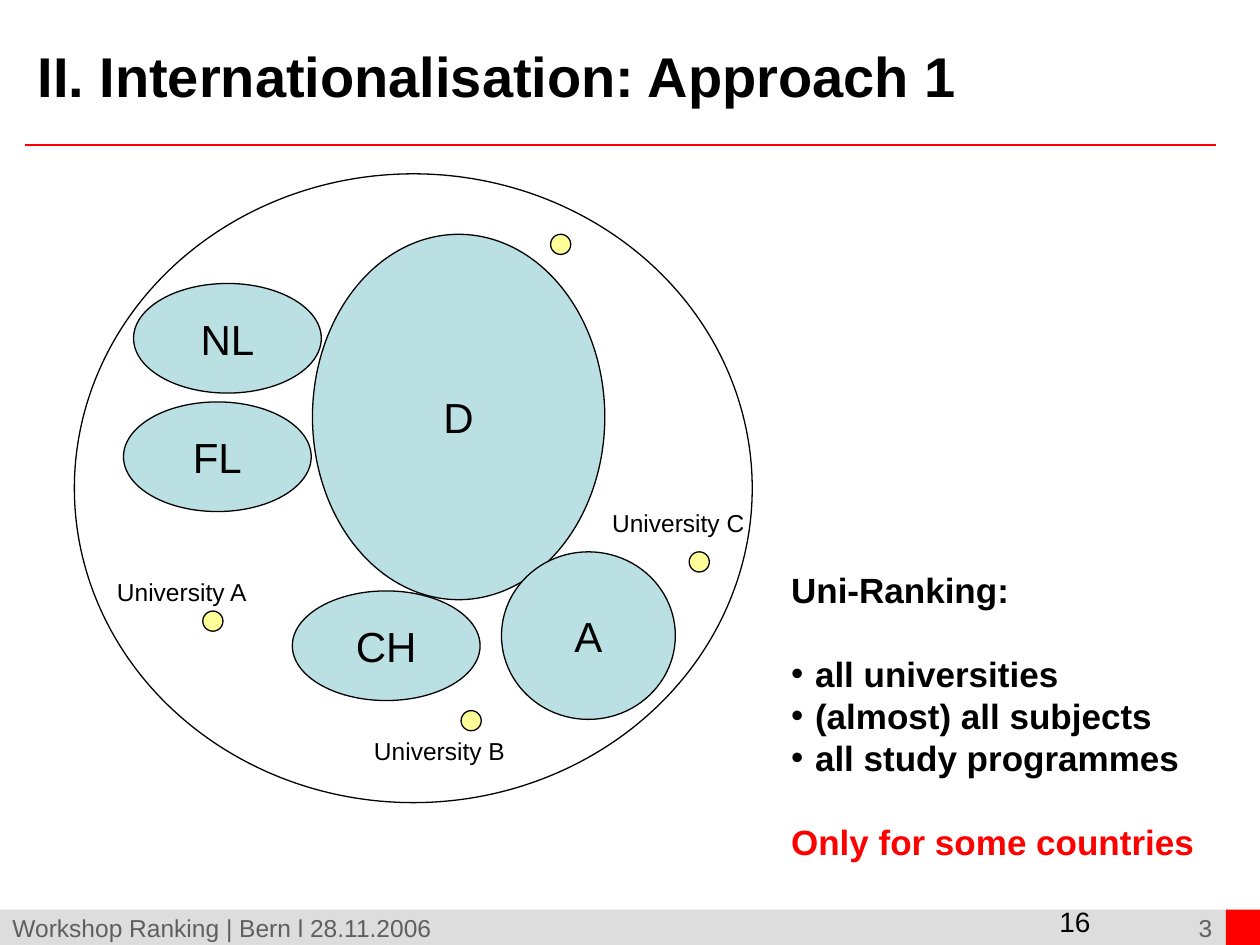
from lxml import etree
from pptx import Presentation
from pptx.dml.color import RGBColor
from pptx.enum.shapes import MSO_CONNECTOR, MSO_SHAPE
from pptx.enum.text import MSO_ANCHOR, PP_ALIGN
from pptx.oxml.ns import qn
from pptx.util import Inches, Pt

OVAL, RECTANGLE = MSO_SHAPE.OVAL, MSO_SHAPE.RECTANGLE
STRAIGHT = MSO_CONNECTOR.STRAIGHT
LEFT, CENTER, RIGHT = PP_ALIGN.LEFT, PP_ALIGN.CENTER, PP_ALIGN.RIGHT
MIDDLE = MSO_ANCHOR.MIDDLE

BLACK = RGBColor(0x00, 0x00, 0x00)
RED = RGBColor(0xFF, 0x00, 0x00)
BAR_GREY = RGBColor(0xDD, 0xDD, 0xDD)
FOOTER_GREY = RGBColor(0x5F, 0x5F, 0x5F)
COUNTRY_BLUE = RGBColor(0xBB, 0xE0, 0xE3)
UNIVERSITY_YELLOW = RGBColor(0xFF, 0xFF, 0x99)
FONT = "Arial"

# Content; boxes are (left, top, width, height) in inches
TITLE = "II. Internationalisation: Approach 1"
FOOTER = "Workshop Ranking | Bern l 28.11.2006"
COUNTRIES = [
    ("D", (2.48, 1.86, 2.32, 2.9)),
    ("A", (3.98, 4.38, 1.38, 1.33)),
    ("CH", (2.32, 4.69, 1.49, 0.87)),
    ("NL", (1.06, 2.25, 1.49, 0.87)),
    ("FL", (0.98, 3.19, 1.49, 0.87)),
]
RANKING_AREA = (0.59, 1.38, 5.38, 4.99)
DOT_SIZE = 0.16
UNIVERSITY_DOTS = [(1.61, 4.85), (3.66, 5.64), (4.37, 1.86), (5.47, 4.38)]
LABEL_WIDTH, LABEL_HEIGHT = 1.3, 0.33
UNIVERSITY_LABELS = [
    ("University A", 0.83, 4.53),
    ("University B", 2.87, 5.79),
    ("University C", 4.76, 3.98),
]
# text, bulleted, colour, space before in points
RANKING_NOTES = [
    ("Uni-Ranking:", False, BLACK, 0),
    ("all universities", True, BLACK, 24),
    ("(almost) all subjects", True, BLACK, 0),
    ("all study programmes", True, BLACK, 0),
    ("Only for some countries", False, RED, 24),
]
NOTES_INDENT = Inches(0.19)

prs = Presentation()
prs.slide_width, prs.slide_height = Inches(10), Inches(7.5)
slide = prs.slides.add_slide(prs.slide_layouts[6])


def style(paragraph, size, color=BLACK, bold=False, align=LEFT):
    paragraph.alignment = align
    font = paragraph.font
    font.name, font.size, font.bold = FONT, Pt(size), bold
    font.color.rgb = color


def add_shape(kind, box, fill=None, outlined=True):
    shape = slide.shapes.add_shape(kind, *map(Inches, box))
    shape.shadow.inherit = False
    if fill is None:
        shape.fill.background()
    else:
        shape.fill.solid()
        shape.fill.fore_color.rgb = fill
    if outlined:
        shape.line.color.rgb = BLACK
        shape.line.width = Pt(0.75)
    else:
        shape.line.fill.background()
    return shape


def add_text(text, box, size, wrap=True, **look):
    frame = slide.shapes.add_textbox(*map(Inches, box)).text_frame
    frame.word_wrap = wrap
    frame.text = text
    style(frame.paragraphs[0], size, **look)


# Footer bar, red corner and title rule
add_shape(RECTANGLE, (0, 7.22, 9.76, 0.28), BAR_GREY, outlined=False)
rule = slide.shapes.add_connector(
    STRAIGHT, Inches(0.2), Inches(1.15), Inches(9.65), Inches(1.15))
rule.line.color.rgb = RED
rule.line.width = Pt(0.75)
etree.SubElement(rule._element.spPr, qn("a:effectLst"))
add_shape(RECTANGLE, (9.73, 7.22, 0.3, 0.3), RED, outlined=False)
add_text("3", (8.7, 7.2, 1.02, 0.33), 14, color=FOOTER_GREY, align=RIGHT)
add_text(FOOTER, (0, 7.2, 8.62, 0.33), 14, color=FOOTER_GREY)
add_text(TITLE, (0.2, 0.28, 9.24, 0.63), 32, bold=True)

# Countries
for name, box in COUNTRIES:
    frame = add_shape(OVAL, box, COUNTRY_BLUE).text_frame
    frame.word_wrap = False
    frame.vertical_anchor = MIDDLE
    frame.text = name
    style(frame.paragraphs[0], 24, align=CENTER)

add_text("16", (8.31, 7.13, 0.45, 0.37), 16, wrap=False)

# Ranking area with single universities
add_shape(OVAL, RANKING_AREA)
for left, top in UNIVERSITY_DOTS:
    add_shape(OVAL, (left, top, DOT_SIZE, DOT_SIZE), UNIVERSITY_YELLOW)
for name, left, top in UNIVERSITY_LABELS:
    add_text(name, (left, top, LABEL_WIDTH, LABEL_HEIGHT), 14, wrap=False)

# Ranking notes
notes = slide.shapes.add_textbox(
    Inches(6.18), Inches(4.46), Inches(3.62), Inches(2.43)).text_frame
notes.word_wrap = True
for index, (text, bulleted, color, gap) in enumerate(RANKING_NOTES):
    paragraph = notes.add_paragraph() if index else notes.paragraphs[0]
    paragraph.text = text
    properties = paragraph._p.get_or_add_pPr()
    properties.set("marL", str(NOTES_INDENT))
    properties.set("indent", str(-NOTES_INDENT))
    if bulleted:
        etree.SubElement(properties, qn("a:buFont"), typeface=FONT)
        etree.SubElement(properties, qn("a:buChar"), char="•")
    paragraph.space_before = Pt(gap)
    style(paragraph, 20, color, bold=True)

prs.save("out.pptx")
